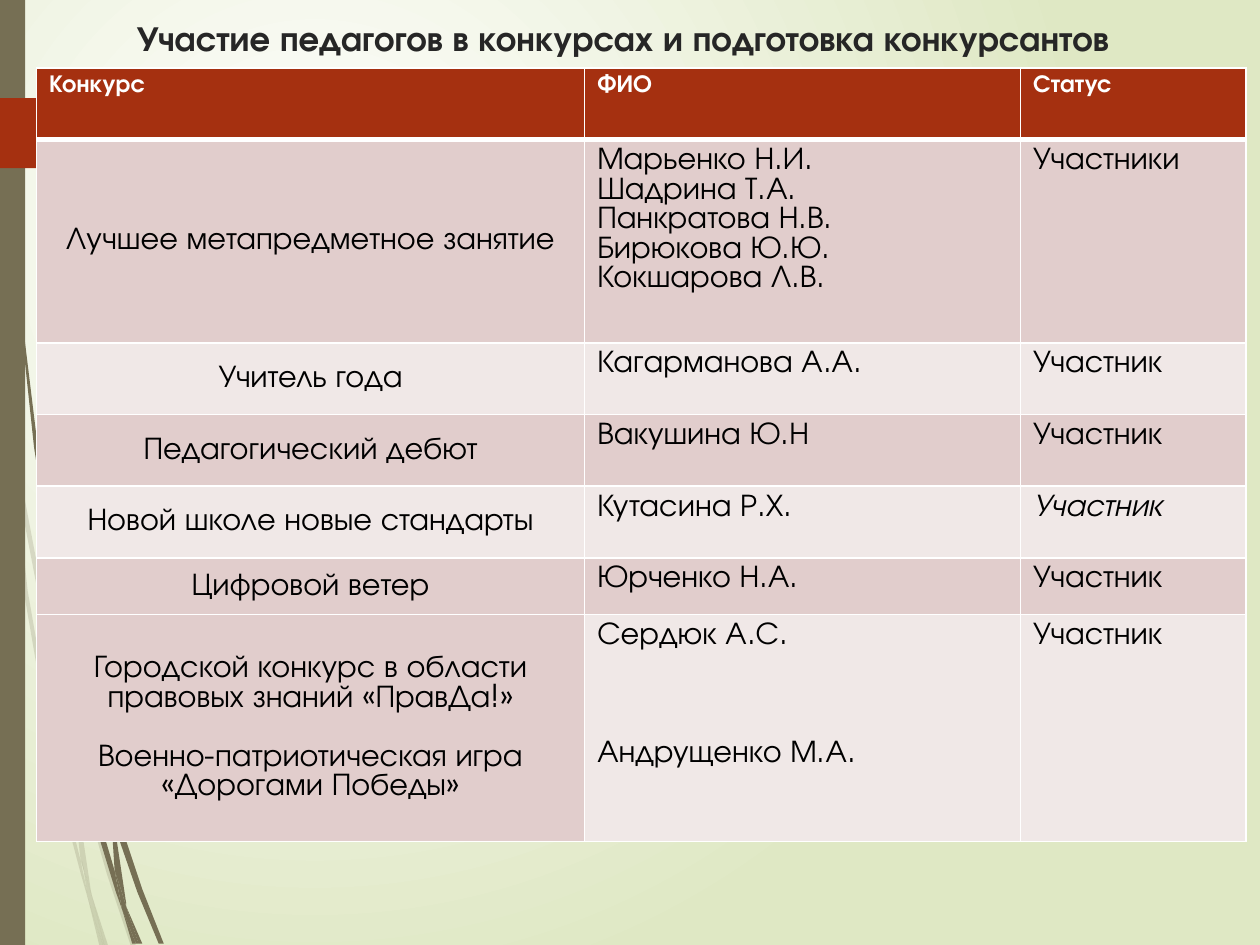
from lxml import etree
from pptx import Presentation
from pptx.dml.color import RGBColor
from pptx.enum.shapes import MSO_SHAPE
from pptx.enum.text import MSO_ANCHOR, PP_ALIGN
from pptx.oxml.ns import qn
from pptx.util import Pt

RECTANGLE, PENTAGON = MSO_SHAPE.RECTANGLE, MSO_SHAPE.PENTAGON
TOP, MIDDLE = MSO_ANCHOR.TOP, MSO_ANCHOR.MIDDLE
LEFT, CENTER = PP_ALIGN.LEFT, PP_ALIGN.CENTER
FONT = "TeX Gyre Adventor"
OLIVE, RED, WHITE, BLACK = "766F54", "A53010", "FFFFFF", "000000"
ROSE, PALE = "E1CDCC", "F0E8E7"
LINE_HEIGHT = 16.9


def color(value):
    return RGBColor.from_string(value)


def write(para, text, align, formats):
    para.alignment = align
    span = para.add_run()
    span.text = text
    span.font.color.rgb = color(formats["color"])
    for name in ("name", "size", "bold", "italic"):
        setattr(span.font, name, formats[name])


deck = Presentation()
deck.slide_width, deck.slide_height = Pt(720), Pt(540)
page = deck.slides.add_slide(deck.slide_layouts[6])

# Background: radial gradient
fill = page.background.fill
fill.gradient()
for stop, value in zip(fill.gradient_stops, (WHITE, "DFE8C4")):
    stop.color.rgb = color(value)
gradient = page.element.find(".//" + qn("a:gradFill"))
gradient.remove(gradient.find(qn("a:lin")))
circle = etree.SubElement(gradient, qn("a:path"), path="circle")
etree.SubElement(circle, qn("a:fillToRect"), l="50000", t="50000", r="100000", b="100000")

# Grass blades: outlines in hundredths of an inch
faint_blades = [
    [(40, 522), (59, 599), (59, 586), (43, 520), (10, 345), (12, 376)],
    [(64, 607), (61, 596), (61, 610), (85, 694), (104, 751), (108, 751), (88, 692)],
    [(83, 751), (86, 751), (73, 711)],
    [(64, 683), (48, 619), (22, 469), (12, 376), (8, 350), (19, 470), (45, 621),
     (64, 693), (70, 714), (69, 707)],
    [(58, 599), (60, 646), (64, 683), (67, 692), (73, 711), (72, 706), (63, 646),
     (61, 610), (61, 608)],
    [(70, 714), (79, 751), (82, 751)],
    [(67, 692), (65, 683), (69, 707), (70, 714), (82, 751), (83, 751), (73, 711)],
]
dark_blades = [
    [(5, 110), (14, 233), (27, 355), (46, 477), (47, 481), (45, 457), (45, 453),
     (30, 355), (15, 232), (6, 109), (4, 48), (3, 0), (2, 0), (3, 48)],
    [(94, 649), (91, 641), (91, 656), (109, 708), (126, 749), (130, 749), (113, 706)],
    [(91, 691), (81, 657), (60, 556), (53, 505), (47, 477), (56, 557), (77, 659),
     (92, 708), (97, 722), (96, 717)],
    [(110, 749), (113, 749), (100, 719)],
    [(97, 722), (105, 749), (108, 749)],
    [(88, 645), (91, 691), (96, 706), (100, 719), (100, 716), (91, 656), (90, 651)],
    [(96, 706), (91, 691), (96, 717), (97, 722), (108, 749), (110, 749), (100, 719)],
]
for blades, opacity in ((faint_blades, 20), (dark_blades, 100)):
    for outline in blades:
        builder = page.shapes.build_freeform(*outline[0], scale=Pt(0.72))
        builder.add_line_segments(outline[1:], close=True)
        blade = builder.convert_to_shape()
        blade.shadow.inherit = False
        blade.line.fill.background()
        blade.fill.solid()
        blade.fill.fore_color.rgb = color(OLIVE)
        if opacity < 100:
            tint = blade.fill._xPr.find(".//" + qn("a:srgbClr"))
            etree.SubElement(tint, qn("a:alpha"), val=str(opacity * 1000))

# Side bar and tab
for kind, top, width, height, value in (
    (RECTANGLE, 0, 14.4, 540, OLIVE),
    (PENTAGON, 56, 107.5, 40, RED),
):
    shape = page.shapes.add_shape(kind, 0, Pt(top), Pt(width), Pt(height))
    shape.shadow.inherit = False
    shape.line.fill.background()
    shape.fill.solid()
    shape.fill.fore_color.rgb = color(value)
    if kind == PENTAGON:
        shape.adjustments[0] = 0.46

# Title
box = page.shapes.add_textbox(0, Pt(5.8), Pt(712), Pt(48))
box.text_frame.word_wrap = True
box.text_frame.vertical_anchor = TOP
title_format = dict(name=FONT, size=Pt(20), bold=True, italic=False, color="262626")
write(box.text_frame.paragraphs[0], "Участие педагогов в конкурсах и подготовка конкурсантов",
      CENTER, title_format)

# Table: every cell is a list of paragraphs
rows = [
    (41, [["Конкурс"], ["ФИО"], ["Статус"]]),
    (116, [["Лучшее метапредметное занятие"],
           ["Марьенко Н.И.", "Шадрина Т.А.", "Панкратова Н.В.", "Бирюкова Ю.Ю.",
            "Кокшарова Л.В."],
           ["Участники"]]),
    (41, [["Учитель года"], ["Кагарманова А.А."], ["Участник"]]),
    (41, [["Педагогический дебют"], ["Вакушина Ю.Н"], ["Участник"]]),
    (41, [["Новой школе новые стандарты"], ["Кутасина Р.Х."], ["Участник"]]),
    (32.4, [["Цифровой ветер"], ["Юрченко Н.А."], ["Участник"]]),
    (129.6, [["Городской конкурс в области правовых знаний «ПравДа!»",
              "Военно-патриотическая игра «Дорогами Победы»"],
             ["Сердюк А.С.", "Андрущенко М.А."],
             ["Участник"]]),
]
widths = (313.2, 249.1, 128.9)
last_row = len(rows) - 1
italic_cell = (4, 2)
lines_skipped = {(last_row, 0): 1, (last_row, 1): 3}

frame = page.shapes.add_table(len(rows), len(widths), Pt(20.9), Pt(38.9),
                              Pt(sum(widths)), Pt(sum(height for height, _ in rows)))
table = frame.table
for column, width in zip(table.columns, widths):
    column.width = Pt(width)

for r, (height, texts) in enumerate(rows):
    table.rows[r].height = Pt(height)
    header = r == 0
    for c, paragraphs in enumerate(texts):
        cell = table.cell(r, c)
        border_widths = {"lnL": 1, "lnR": 1, "lnT": 3 if r == 1 else 1, "lnB": 3 if header else 1}
        properties = cell._tc.get_or_add_tcPr()
        for side, width in border_widths.items():
            border = etree.SubElement(properties, qn("a:" + side), w=str(Pt(width)))
            paint = etree.SubElement(border, qn("a:solidFill"))
            etree.SubElement(paint, qn("a:srgbClr"), val=WHITE)

        banded = r % 2 == 1 or (r, c) == (last_row, 0)
        cell.fill.solid()
        cell.fill.fore_color.rgb = color(RED if header else ROSE if banded else PALE)
        contest = c == 0 and not header
        cell.vertical_anchor = MIDDLE if contest else TOP
        cell_format = dict(name=FONT, size=Pt(14 if header else 18), bold=header,
                           italic=(r, c) == italic_cell, color=WHITE if header else BLACK)
        for i, text in enumerate(paragraphs):
            para = cell.text_frame.add_paragraph() if i else cell.text_frame.paragraphs[0]
            para.line_spacing = Pt(13.1 if header else LINE_HEIGHT)
            if i:
                para.space_before = Pt(LINE_HEIGHT * lines_skipped.get((r, c), 0))
            write(para, text, CENTER if contest else LEFT, cell_format)

deck.save("out.pptx")
